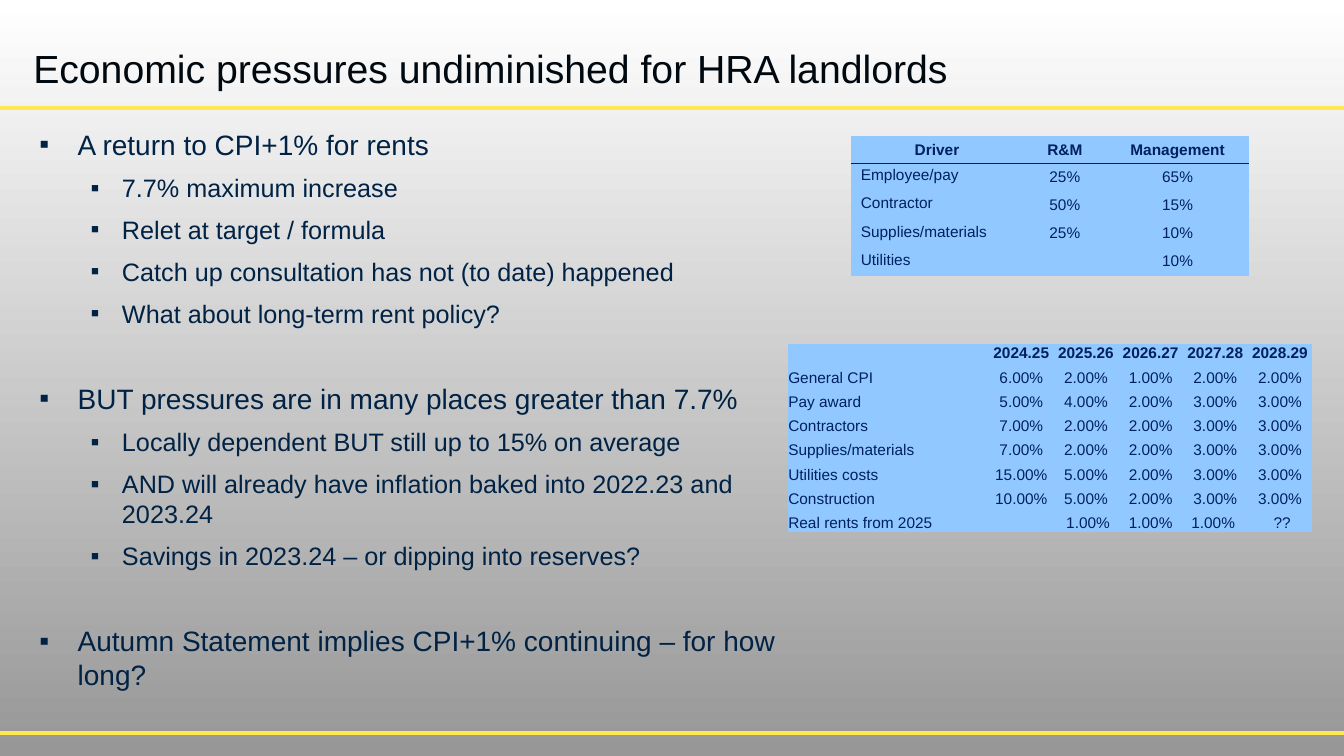
from dataclasses import dataclass

from lxml.etree import SubElement
from pptx import Presentation
from pptx.dml.color import RGBColor
from pptx.enum.shapes import MSO_CONNECTOR
from pptx.enum.text import MSO_ANCHOR, MSO_AUTO_SIZE, PP_ALIGN
from pptx.oxml.ns import qn
from pptx.slide import Slide
from pptx.table import _Cell
from pptx.text.text import _Paragraph
from pptx.util import Emu, Inches, Pt

WHITE = RGBColor(0xFF, 0xFF, 0xFF)
GREY = RGBColor(0x97, 0x97, 0x97)
YELLOW = RGBColor(0xFF, 0xE8, 0x50)
BLACK = RGBColor(0x00, 0x08, 0x10)
NAVY = RGBColor(0x00, 0x22, 0x44)
TABLE_TEXT = RGBColor(0x00, 0x20, 0x60)
TABLE_FILL = RGBColor(0x91, 0xC8, 0xFF)

FONT = "Arial"
SLIDE_WIDTH, SLIDE_HEIGHT = Inches(13.33), Inches(7.5)
GRID_COLUMNS, GRID_ROWS = 160, 90
NO_TABLE_STYLE = "{2D5ABB26-0587-4C30-8999-92F81FD0307C}"


@dataclass(frozen=True)
class Box:
    column: float
    row: float
    columns: float
    rows: float


@dataclass(frozen=True)
class Bullet:
    text: str
    level: int = 1
    space_before: float = 8.3


@dataclass(frozen=True)
class LevelStyle:
    size: int
    margin: float
    hanging: float


@dataclass(frozen=True)
class TableSpec:
    box: Box
    column_widths: list[float]
    header_height: float
    row_height: float
    cells: list[list[str]]
    compact: bool


LEVEL_STYLES = [LevelStyle(20, 0.44, 0.38), LevelStyle(18, 0.88, 0.31)]
TITLE_BOX = Box(2.76, 2.64, 126.72, 8.88)
BODY_BOX = Box(2.76, 14.52, 91.08, 69.84)
RULE_ROWS = [12.84, 87.24]

BULLETS = [
    Bullet("A return to CPI+1% for rents", 0, 0),
    Bullet("7.7% maximum increase"),
    Bullet("Relet at target / formula"),
    Bullet("Catch up consultation has not (to date) happened"),
    Bullet("What about long-term rent policy?"),
    Bullet("BUT pressures are in many places greater than 7.7%", 0, 38),
    Bullet("Locally dependent BUT still up to 15% on average"),
    Bullet("AND will already have inflation baked into 2022.23 and 2023.24"),
    Bullet("Savings in 2023.24 – or dipping into reserves?"),
    Bullet("Autumn Statement implies CPI+1% continuing – for how long?", 0, 38),
]

DRIVERS = TableSpec(
    Box(101.28, 16.2, 47.4, 16.64), [20.56, 9.88, 16.96], 3.2, 3.36,
    [
        ["Driver", "R&M", "Management"],
        ["Employee/pay", "25%", "65%"],
        ["Contractor", "50%", "15%"],
        ["Supplies/materials", "25%", "10%"],
        ["Utilities", "", "10%"],
    ],
    compact=False,
)

FORECAST = TableSpec(
    Box(93.84, 40.92, 62.4, 22.43), [23.9] + [7.7] * 5, 2.2, 2.89,
    [
        ["", "2024.25", "2025.26", "2026.27", "2027.28", "2028.29"],
        ["General CPI", "6.00%", "2.00%", "1.00%", "2.00%", "2.00%"],
        ["Pay award", "5.00%", "4.00%", "2.00%", "3.00%", "3.00%"],
        ["Contractors", "7.00%", "2.00%", "2.00%", "3.00%", "3.00%"],
        ["Supplies/materials", "7.00%", "2.00%", "2.00%", "3.00%", "3.00%"],
        ["Utilities costs", "15.00%", "5.00%", "2.00%", "3.00%", "3.00%"],
        ["Construction", "10.00%", "5.00%", "2.00%", "3.00%", "3.00%"],
        ["Real rents from 2025", "", " 1.00%", "1.00%", "1.00% ", " ??"],
    ],
    compact=True,
)


def across(columns: float) -> Emu:
    return Emu(round(SLIDE_WIDTH * columns / GRID_COLUMNS))


def down(rows: float) -> Emu:
    return Emu(round(SLIDE_HEIGHT * rows / GRID_ROWS))


def place(shape, box: Box) -> None:
    shape.left, shape.top = across(box.column), down(box.row)
    shape.width, shape.height = across(box.columns), down(box.rows)


def set_font(paragraph: _Paragraph, size: float, color: RGBColor, bold: bool = False) -> None:
    font = paragraph.font
    font.name, font.size, font.bold = FONT, Pt(size), bold
    font.color.rgb = color


def paint_background(slide: Slide) -> None:
    fill = slide.background.fill
    fill.gradient()
    fill.gradient_angle = 270
    for stop, color, position in zip(fill.gradient_stops, [WHITE, GREY], [0, 1]):
        stop.color.rgb, stop.position = color, position


def draw_rule(slide: Slide, row: float) -> None:
    rule = slide.shapes.add_connector(
        MSO_CONNECTOR.STRAIGHT, 0, down(row), SLIDE_WIDTH, down(row))
    rule.line.color.rgb, rule.line.width = YELLOW, Pt(3)
    SubElement(rule._element.spPr, qn("a:effectLst"))


def write_title(slide: Slide, text: str) -> None:
    title = slide.shapes.title
    place(title, TITLE_BOX)
    frame = title.text_frame
    frame.text = text
    frame.auto_size, frame.vertical_anchor = MSO_AUTO_SIZE.NONE, MSO_ANCHOR.BOTTOM
    paragraph = frame.paragraphs[0]
    paragraph.alignment, paragraph.line_spacing = PP_ALIGN.LEFT, 0.9
    set_font(paragraph, 28, BLACK)


def write_bullets(slide: Slide, bullets: list[Bullet]) -> None:
    body = slide.placeholders[1]
    place(body, BODY_BOX)
    frame = body.text_frame
    frame.text = "\n".join(bullet.text for bullet in bullets)
    frame.auto_size, frame.vertical_anchor = MSO_AUTO_SIZE.NONE, MSO_ANCHOR.TOP
    for paragraph, bullet in zip(frame.paragraphs, bullets):
        style = LEVEL_STYLES[bullet.level]
        paragraph.level = bullet.level
        properties = paragraph._p.get_or_add_pPr()
        properties.set("marL", str(Inches(style.margin)))
        properties.set("indent", str(-Inches(style.hanging)))
        SubElement(properties, qn("a:buFont"), typeface=FONT)
        SubElement(properties, qn("a:buChar"), char="▪")
        paragraph.space_before = Pt(bullet.space_before)
        set_font(paragraph, style.size, NAVY)


def underline_cell(cell: _Cell) -> None:
    border = SubElement(cell._tc.get_or_add_tcPr(), qn("a:lnB"), w=str(Pt(1.33)))
    solid = SubElement(border, qn("a:solidFill"))
    SubElement(solid, qn("a:srgbClr"), val=str(NAVY))


def write_cell(cell: _Cell, text: str, row: int, column: int, compact: bool) -> None:
    cell.text = text
    if compact:
        cell.margin_left = cell.margin_right = cell.margin_top = cell.margin_bottom = 0
        cell.vertical_anchor = MSO_ANCHOR.BOTTOM
    elif row == 0:
        underline_cell(cell)
    cell.fill.solid()
    cell.fill.fore_color.rgb = TABLE_FILL
    paragraph = cell.text_frame.paragraphs[0]
    is_label = row > 0 and column == 0
    paragraph.alignment = PP_ALIGN.LEFT if is_label else PP_ALIGN.CENTER
    if is_label and not compact:
        paragraph.line_spacing, paragraph.space_after = 0.9, Pt(6)
    set_font(paragraph, 11, TABLE_TEXT, bold=row == 0)
    if not text:
        SubElement(paragraph._p, qn("a:endParaRPr"), sz="1100")


def draw_table(slide: Slide, spec: TableSpec) -> None:
    box = spec.box
    table = slide.shapes.add_table(
        len(spec.cells), len(spec.column_widths), across(box.column), down(box.row),
        across(box.columns), down(box.rows)).table
    table.first_row = table.horz_banding = False
    table._tbl.tblPr.find(qn("a:tableStyleId")).text = NO_TABLE_STYLE
    for column, width in zip(table.columns, spec.column_widths):
        column.width = across(width)
    for row, texts in enumerate(spec.cells):
        table.rows[row].height = down(spec.row_height if row else spec.header_height)
        for column, text in enumerate(texts):
            write_cell(table.cell(row, column), text, row, column, spec.compact)


def main() -> None:
    presentation = Presentation()
    presentation.slide_width, presentation.slide_height = SLIDE_WIDTH, SLIDE_HEIGHT
    slide = presentation.slides.add_slide(presentation.slide_layouts[1])
    paint_background(slide)
    for row in RULE_ROWS:
        draw_rule(slide, row)
    write_title(slide, "Economic pressures undiminished for HRA landlords")
    write_bullets(slide, BULLETS)
    for spec in (DRIVERS, FORECAST):
        draw_table(slide, spec)
    presentation.save("out.pptx")


if __name__ == "__main__":
    main()
